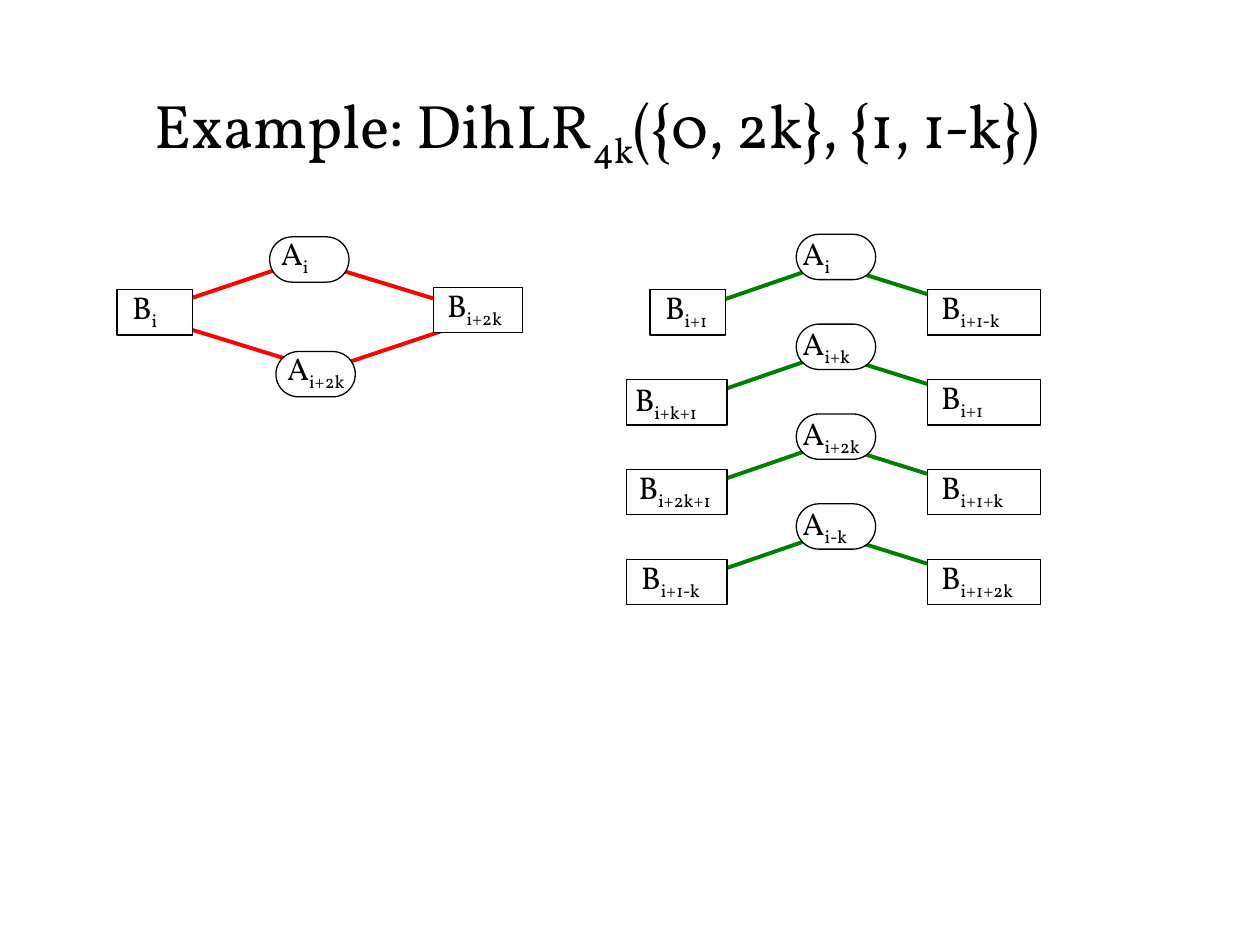
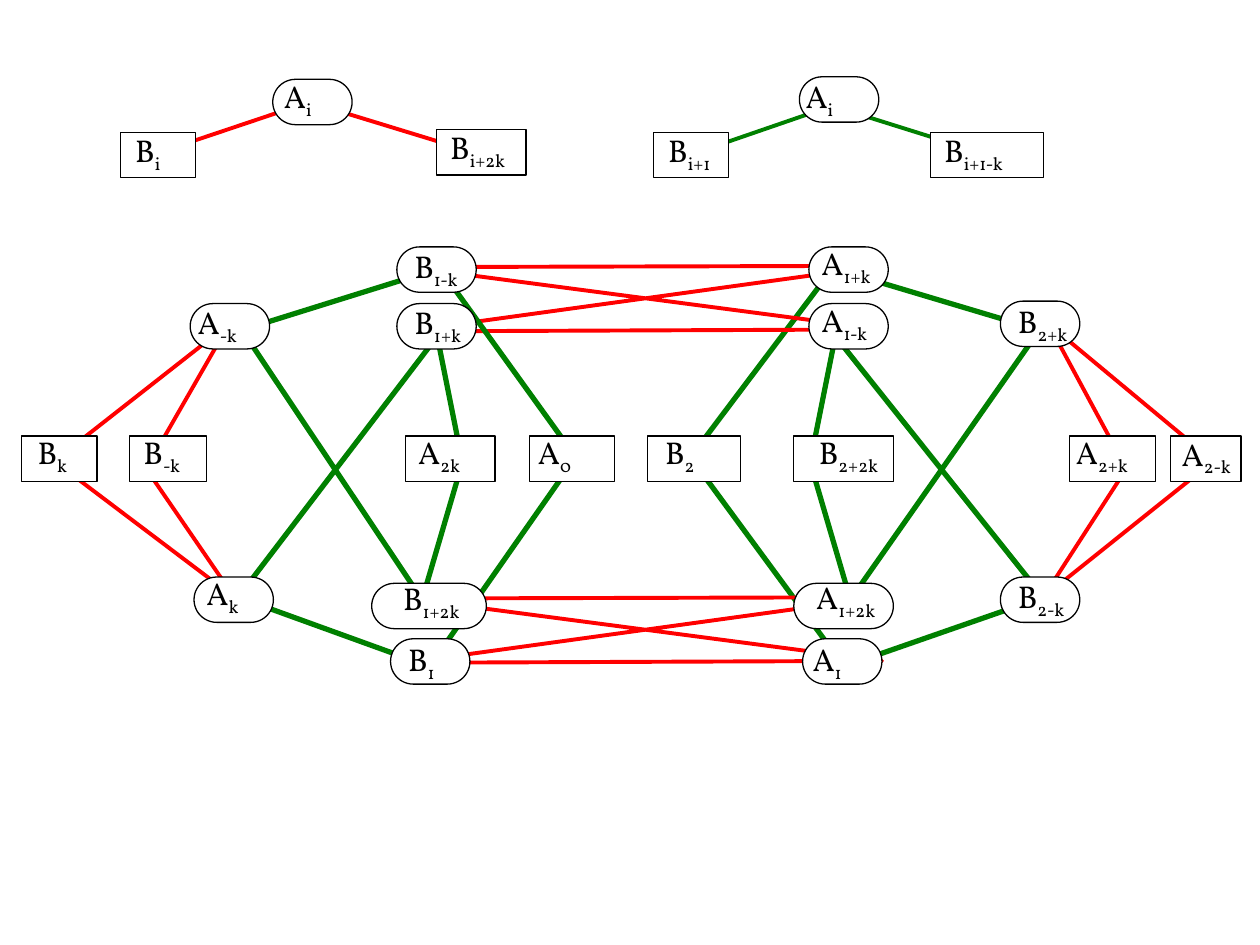
from dataclasses import dataclass

from pptx import Presentation
from pptx.dml.color import RGBColor
from pptx.enum.shapes import MSO_SHAPE as Shape
from pptx.enum.text import MSO_ANCHOR as Anchor, MSO_AUTO_SIZE as AutoSize, PP_ALIGN as Align
from pptx.util import Inches, Pt


@dataclass(frozen=True)
class Theme:
    font: str = "Vollkorn"
    ink: RGBColor = RGBColor(0, 0, 0)
    paper: RGBColor = RGBColor(255, 255, 255)
    red: RGBColor = RGBColor(255, 0, 0)
    green: RGBColor = RGBColor(0, 128, 0)
    title_size: float = 35.1
    label_size: float = 18
    outline: float = 0.75
    edge: float = 2.25
    heavy_edge: float = 3
    subscript: str = "-25000"


THEME = Theme()
COLUMNS, ROWS = 100, 75
NODE_HEIGHT, LABEL_HEIGHT = 3.6, 4
FAN_STEP = 7.13


class Board:
    def __init__(self, presentation, theme):
        self.presentation = presentation
        self.theme = theme
        self.slide = None
        self.origin = (0, 0)

    def new_slide(self):
        self.slide = self.presentation.slides.add_slide(self.presentation.slide_layouts[6])
        self.origin = (0, 0)

    def width(self, columns):
        return round(self.presentation.slide_width * columns / COLUMNS)

    def height(self, rows):
        return round(self.presentation.slide_height * rows / ROWS)

    def point(self, column, row):
        return self.width(column + self.origin[0]), self.height(row + self.origin[1])

    def edges(self, points, color, weight=THEME.edge, close=False):
        start, *rest = [self.point(*point) for point in points]
        builder = self.slide.shapes.build_freeform(*start, scale=1.0)
        builder.add_line_segments(rest, close=close)
        shape = builder.convert_to_shape()
        shape.shadow.inherit = False
        shape.fill.background()
        shape.line.color.rgb = color
        shape.line.width = Pt(weight)

    def text(self, content, column, row, width, height, size):
        box = self.slide.shapes.add_textbox(
            *self.point(column, row), self.width(width), self.height(height))
        frame = box.text_frame
        frame.word_wrap = True
        paragraph = frame.paragraphs[0]
        for index, piece in enumerate(content.split("_")):
            run = paragraph.add_run()
            run.text = piece
            run.font.name = self.theme.font
            run.font.size = Pt(size)
            run.font.color.rgb = self.theme.ink
            if index % 2:
                run._r.get_or_add_rPr().set("baseline", self.theme.subscript)
        return frame

    def title(self, content):
        frame = self.text(content, 7.5, 4.6, 79.8, 11.2, self.theme.title_size)
        frame.vertical_anchor = Anchor.MIDDLE
        frame.paragraphs[0].alignment = Align.CENTER

    def node(self, kind, name, column, row, width, label):
        shape = self.slide.shapes.add_shape(
            kind, *self.point(column, row), self.width(width), self.height(NODE_HEIGHT))
        if kind == Shape.ROUNDED_RECTANGLE:
            shape.adjustments[0] = 0.5
        shape.shadow.inherit = False
        shape.fill.solid()
        shape.fill.fore_color.rgb = self.theme.paper
        shape.line.color.rgb = self.theme.ink
        shape.line.width = Pt(self.theme.outline)
        frame = self.text(name, *label, LABEL_HEIGHT, self.theme.label_size)
        frame.auto_size = AutoSize.SHAPE_TO_FIT_TEXT

    def box(self, name, column, row, width, label):
        self.node(Shape.RECTANGLE, name, column, row, width, label)

    def pill(self, name, column, row, label, width=6.3):
        self.node(Shape.ROUNDED_RECTANGLE, name, column, row, width, label)


def red_fan(board, origin=(0, 0)):
    board.origin = origin
    board.edges([(12.1, 24.7), (24.3, 20.6), (37.7, 24.7)], THEME.red)
    board.box("B_i+2k", 34.4, 22.8, 7.1, (34.5, 22.2, 7))
    board.box("B_i", 9.3, 23, 6, (9.5, 22.4, 6))
    board.pill("A_i", 21.4, 18.8, (21.3, 18.1, 7.1))


def green_fan(board, top, left, right, left_box, left_label, top_width=7.1, origin=(0, 0)):
    board.origin = origin
    board.edges([(53.6, 25.1), (65.8, 20.9), (79.2, 25.1)], THEME.green)
    board.pill(top, 63.2, 18.6, (62.7, 18.1, top_width))
    board.box(right, 73.6, 23, 9, (73.7, 22.4, 8.8))
    column, width = left_box
    board.box(left, column, 23, width, left_label)


def build_example(board):
    board.new_slide()
    board.edges([(38, 25.3), (25.7, 29.4), (12.4, 25.3)], THEME.red)
    board.pill("A_i+2k", 21.9, 27.9, (21.8, 27.2, 8.2))
    red_fan(board)
    narrow, wide = (51.6, 6), (49.7, 8)
    fans = [
        ("A_i", "B_i+1", "B_i+1-k", narrow, (51.8, 22.4, 8.3), 7.1),
        ("A_i+k", "B_i+k+1", "B_i+1", wide, (49.4, 22.55, 8.3), 7.1),
        ("A_i+2k", "B_i+2k+1", "B_i+1+k", wide, (49.7, 22.4, 9.1), 7.9),
        ("A_i-k", "B_i+1-k", "B_i+1+2k", wide, (49.9, 22.4, 8.3), 7.1),
    ]
    for index, fan in enumerate(fans):
        green_fan(board, *fan, origin=(0, index * FAN_STEP))
    board.origin = (0, 0)
    board.title("Example: DihLR_4k_({0, 2k}, {1, 1-k})")


def build_cycle_structure(board):
    board.new_slide()
    middle, middle_label = 34.6, 33.9

    board.edges([(83.2, 25.7), (96.3, 36.6), (82.8, 47.4), (89.4, 37.2)], THEME.red, close=True)
    board.box("A_2+k", 84.9, middle, 6.8, (84.4, middle_label, 7.2))
    board.box("A_2-k", 92.9, middle, 5.6, (92.8, 34, 7.1))

    board.edges([(54.8, 36.3), (66.1, 21.3), (82.5, 26.2), (67.5, 47.6), (64.3, 36.7),
                 (66.3, 26.7), (82.8, 47.4), (67, 52.9)],
                THEME.green, THEME.heavy_edge, close=True)
    board.box("B_2", 51.4, middle, 7.4, (51.8, middle_label, 6))
    board.box("B_2+2k", 63, middle, 7.9, (64, middle_label, 8.8))
    board.pill("B_2+k", 79.4, 23.9, (79.8, 23.5, 7.1))
    board.pill("B_2-k", 79.4, 45.8, (79.8, 45.3, 6))

    board.edges([(18.2, 25.7), (4.3, 36.6), (18.6, 47.4), (11.6, 37.2)], THEME.red, close=True)
    board.box("B_k", 1.7, middle, 6, (2, middle_label, 6))
    board.box("B_-k", 10.3, middle, 6.1, (10.4, middle_label, 6))

    for top in (21.1, 47.4):
        board.edges([(32.4, top + 0.1), (69.9, top), (32.2, top + 5.2), (70, top + 5.05)],
                    THEME.red, close=True)
    board.pill("A_1-k", 64.2, 24.1, (64.2, 23.4, 7.1))
    board.pill("A_1+k", 64.2, 19.6, (64.2, 18.9, 7.1))
    board.pill("A_1", 63.7, 50.7, (63.5, 50.3, 7.1))
    board.pill("A_1+2k", 63, 46.3, (63.8, 45.4, 8.7), 7.9)

    board.edges([(45.7, 36.3), (34.9, 21.3), (19.2, 26.2), (33.5, 47.6), (36.7, 36.7),
                 (34.7, 26.7), (18.9, 47.4), (34.1, 52.9)],
                THEME.green, THEME.heavy_edge, close=True)
    board.box("A_0", 42, middle, 6.8, (41.7, middle_label, 7.1))
    board.box("A_2k", 32.2, middle, 7.1, (32.2, middle_label, 7.1))
    board.pill("B_1+k", 31.5, 24.1, (31.9, 23.6, 6.7))
    board.pill("B_1-k", 31.5, 19.6, (31.9, 19.1, 6))
    board.pill("A_-k", 15.1, 24.1, (14.7, 23.6, 7.1))
    board.pill("A_k", 15.4, 45.8, (15.4, 45.1, 7.1))
    board.pill("B_1", 31, 50.7, (31.4, 50.3, 6))
    board.pill("B_1+2k", 29.5, 46.3, (31, 45.5, 8.9), 9.1)

    legend_origin = (0.25, -12.5)
    red_fan(board, legend_origin)
    green_fan(board, "A_i", "B_i+1", "B_i+1-k", (51.6, 6), (51.8, 22.4, 8.3),
              origin=legend_origin)


def main():
    presentation = Presentation()
    presentation.slide_width, presentation.slide_height = Inches(10), Inches(7.5)
    board = Board(presentation, THEME)
    build_example(board)
    build_cycle_structure(board)
    presentation.save("out.pptx")


if __name__ == "__main__":
    main()
